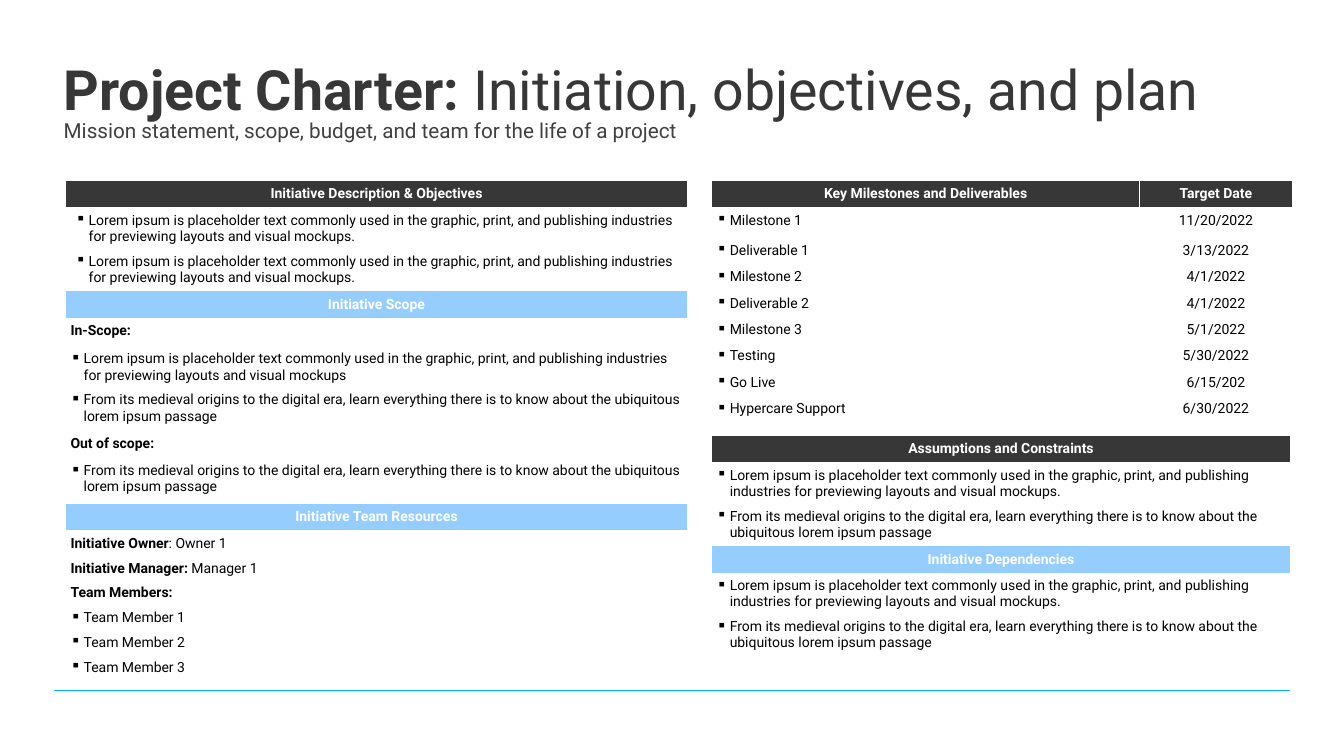
from lxml import etree
from pptx import Presentation
from pptx.dml.color import RGBColor
from pptx.enum.shapes import MSO_CONNECTOR
from pptx.enum.text import MSO_ANCHOR, MSO_AUTO_SIZE, PP_ALIGN
from pptx.oxml import parse_xml
from pptx.oxml.ns import nsdecls, qn
from pptx.util import Pt

COLORS = {"dark": "373737", "light": "96CDFF", "white": "FFFFFF",
          "black": "000000", "subtitle": "404040", "rule": "00B0F0"}
FONT = "Roboto"
NO_STYLE = "{2D5ABB26-0587-4C30-8999-92F81FD0307C}"
BAND_HEIGHT = 18.9
PAIR_HEIGHT = 60.1
INDENT = 9.36

LOREM = ("Lorem ipsum is placeholder text commonly used in the graphic, print, "
         "and publishing industries for previewing layouts and visual mockups")
ORIGINS = ("From its medieval origins to the digital era, learn everything there "
           "is to know about the ubiquitous lorem ipsum passage")


def add_run(paragraph, text, size, color, bold):
    run = paragraph.add_run()
    run.text = text
    formats = {"name": FONT, "size": Pt(size), "bold": bold}
    for attribute, value in formats.items():
        setattr(run.font, attribute, value)
    run.font.color.rgb = RGBColor.from_string(COLORS[color])


def add_grid(left, top, widths, rows):
    table = slide.shapes.add_table(
        len(rows), len(widths), Pt(left), Pt(top), Pt(sum(widths)),
        Pt(sum(height for height, kind, cells in rows))).table
    table.first_row = table.horz_banding = False
    table._tbl.tblPr.find(qn("a:tableStyleId")).text = NO_STYLE
    for column, width in zip(table.columns, widths):
        column.width = Pt(width)
    for r, (height, kind, cells) in enumerate(rows):
        table.rows[r].height = Pt(height)
        is_band = kind in ("dark", "light")
        for c, paragraphs in enumerate(cells):
            cell = table.cell(r, c)
            margins = {"margin_left": 7.2 if kind == "inset" else 3.6,
                       "margin_top": 3.6, "margin_right": 3.6, "margin_bottom": 3.6}
            for attribute, value in margins.items():
                setattr(cell, attribute, Pt(value))
            if kind == "dark":
                for side in ("lnL", "lnR", "lnT"):
                    cell._tc.get_or_add_tcPr().append(parse_xml(
                        f'<a:{side} {nsdecls("a")} w="12700"><a:solidFill>'
                        f'<a:srgbClr val="{COLORS["white"]}"/></a:solidFill></a:{side}>'))
            cell.fill.solid()
            cell.fill.fore_color.rgb = RGBColor.from_string(
                COLORS[kind if is_band else "white"])
            for i, (bullet, bold_text, plain_text) in enumerate(paragraphs):
                frame = cell.text_frame
                paragraph = frame.add_paragraph() if i else frame.paragraphs[0]
                if bullet:
                    properties = paragraph._p.get_or_add_pPr()
                    properties.set("marL", str(Pt(INDENT)))
                    properties.set("indent", str(-Pt(INDENT)))
                    etree.SubElement(properties, qn("a:buChar")).set("char", bullet)
                if i:
                    paragraph.space_before = Pt(6)
                if is_band or c:
                    paragraph.alignment = PP_ALIGN.CENTER
                for text, bold in ((bold_text, True), (plain_text, False)):
                    if text:
                        add_run(paragraph, text, 10, "white" if is_band else "black", bold)


deck = Presentation()
deck.slide_width, deck.slide_height = Pt(960), Pt(540)
slide = deck.slides.add_slide(deck.slide_layouts[5])

rule = slide.shapes.add_connector(
    MSO_CONNECTOR.STRAIGHT, Pt(38.4), Pt(493), Pt(921.6), Pt(493))
rule.line.color.rgb = RGBColor.from_string(COLORS["rule"])
rule.line.width = Pt(0.5)
etree.SubElement(rule._element.spPr, qn("a:effectLst"))

title = slide.shapes.title
subtitle = slide.shapes.add_textbox(0, 0, 0, 0)
headings = [
    (title, 28.8, 56.2, 64.8, MSO_ANCHOR.BOTTOM, 0.9,
     [("Project Charter: ", 39.6, "dark", True),
      ("Initiation, objectives, and plan", 39.6, "dark", False)]),
    (subtitle, 85.7, 21.6, 3.6, MSO_ANCHOR.TOP, 0.7,
     [("Mission statement, scope, budget, and team for the life of a project",
       14.8, "subtitle", False)]),
]
for heading, top, height, inset, anchor, spacing, runs in headings:
    heading.left, heading.top = Pt(38.4), Pt(top)
    heading.width, heading.height = Pt(883.2), Pt(height)
    formats = {"margin_left": Pt(7.2), "margin_right": Pt(7.2),
               "margin_top": Pt(inset), "margin_bottom": Pt(3.6),
               "vertical_anchor": anchor, "word_wrap": True,
               "auto_size": MSO_AUTO_SIZE.NONE}
    for attribute, value in formats.items():
        setattr(heading.text_frame, attribute, value)
    paragraph = heading.text_frame.paragraphs[0]
    paragraph.alignment = PP_ALIGN.LEFT
    paragraph.line_spacing = spacing
    for run in runs:
        add_run(paragraph, *run)

lorem = ("▪", "", LOREM + ".")
origins = ("▪", "", ORIGINS)
team = [("", "Initiative Owner", ": Owner 1"),
        ("", "Initiative Manager:", " Manager 1"),
        ("", "Team Members:", "")]
team += [("▪", "", f"Team Member {number}") for number in (1, 2, 3)]

add_grid(46.8, 129, [444.2], [
    (BAND_HEIGHT, "dark", [[("", "Initiative Description & Objectives", "")]]),
    (PAIR_HEIGHT, "inset", [[lorem, lorem]]),
    (BAND_HEIGHT, "light", [[("", "Initiative Scope", "")]]),
    (20.2, "body", [[("", "In-Scope:", "")]]),
    (60.5, "body", [[("▪", "", LOREM), origins]]),
    (19.4, "body", [[("", "Out of scope:", "")]]),
    (33.1, "body", [[origins]]),
    (BAND_HEIGHT, "light", [[("", "Initiative Team Resources", "")]]),
    (107.5, "body", [team]),
])

milestones = [("Milestone 1", "11/20/2022"), ("Deliverable 1", "3/13/2022"),
              ("Milestone 2", "4/1/2022"), ("Deliverable 2", "4/1/2022"),
              ("Milestone 3", "5/1/2022"), ("Testing", "5/30/2022"),
              ("Go Live", "6/15/202"), ("Hypercare Support", "6/30/2022")]
schedule = [(BAND_HEIGHT, "dark", [[("", "Key Milestones and Deliverables", "")],
                                   [("", "Target Date", "")]])]
for number, (milestone, date) in enumerate(milestones):
    schedule.append((BAND_HEIGHT if number else 21.6, "body",
                     [[("▪", "", milestone)], [("", "", date)]]))
add_grid(508.3, 129, [305.6, 109.2], schedule)

add_grid(508.3, 311.2, [413.3], [
    (BAND_HEIGHT, "dark", [[("", "Assumptions and Constraints", "")]]),
    (PAIR_HEIGHT, "body", [[lorem, origins]]),
    (BAND_HEIGHT, "light", [[("", "Initiative Dependencies", "")]]),
    (PAIR_HEIGHT, "body", [[lorem, origins]]),
])

deck.save("out.pptx")
